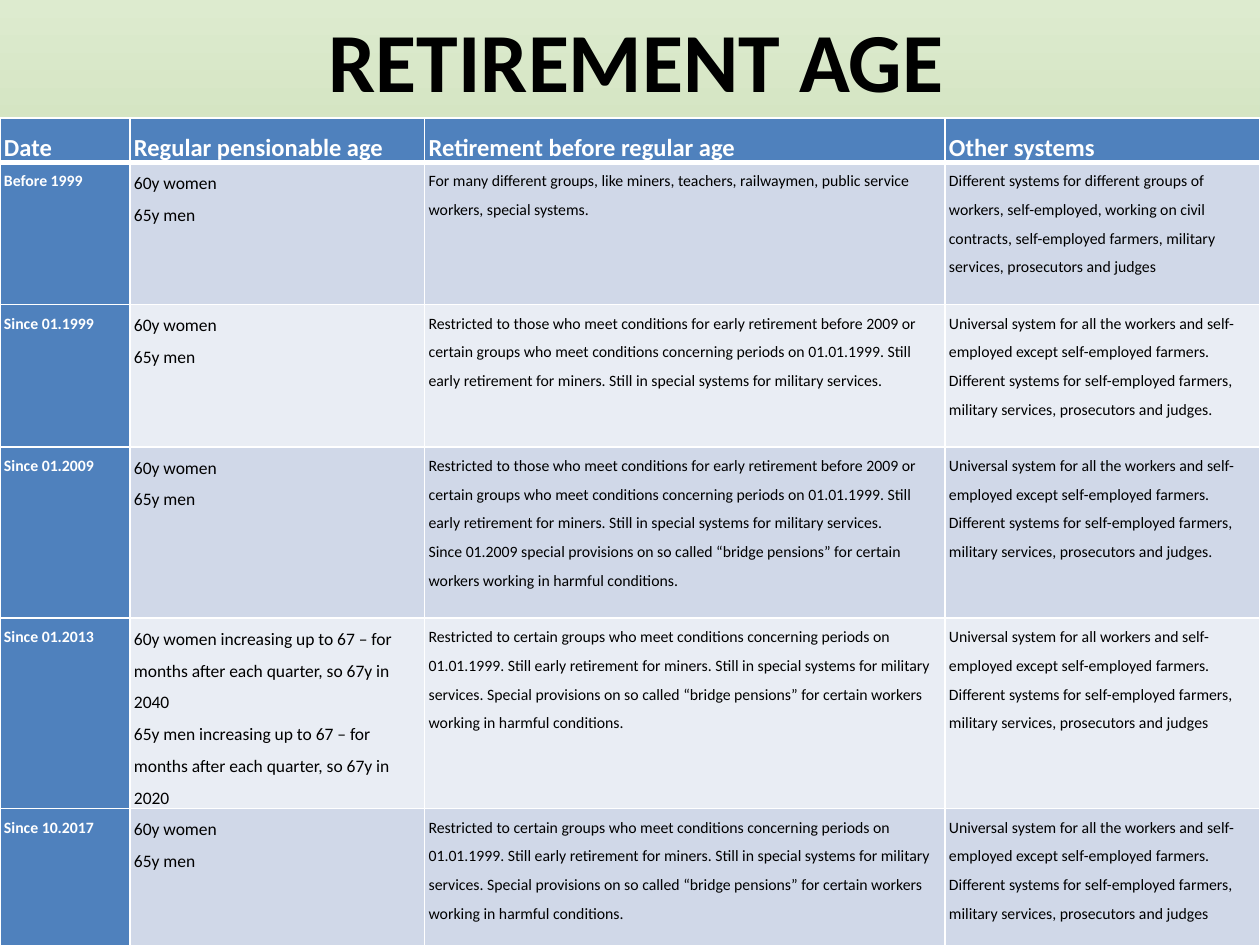
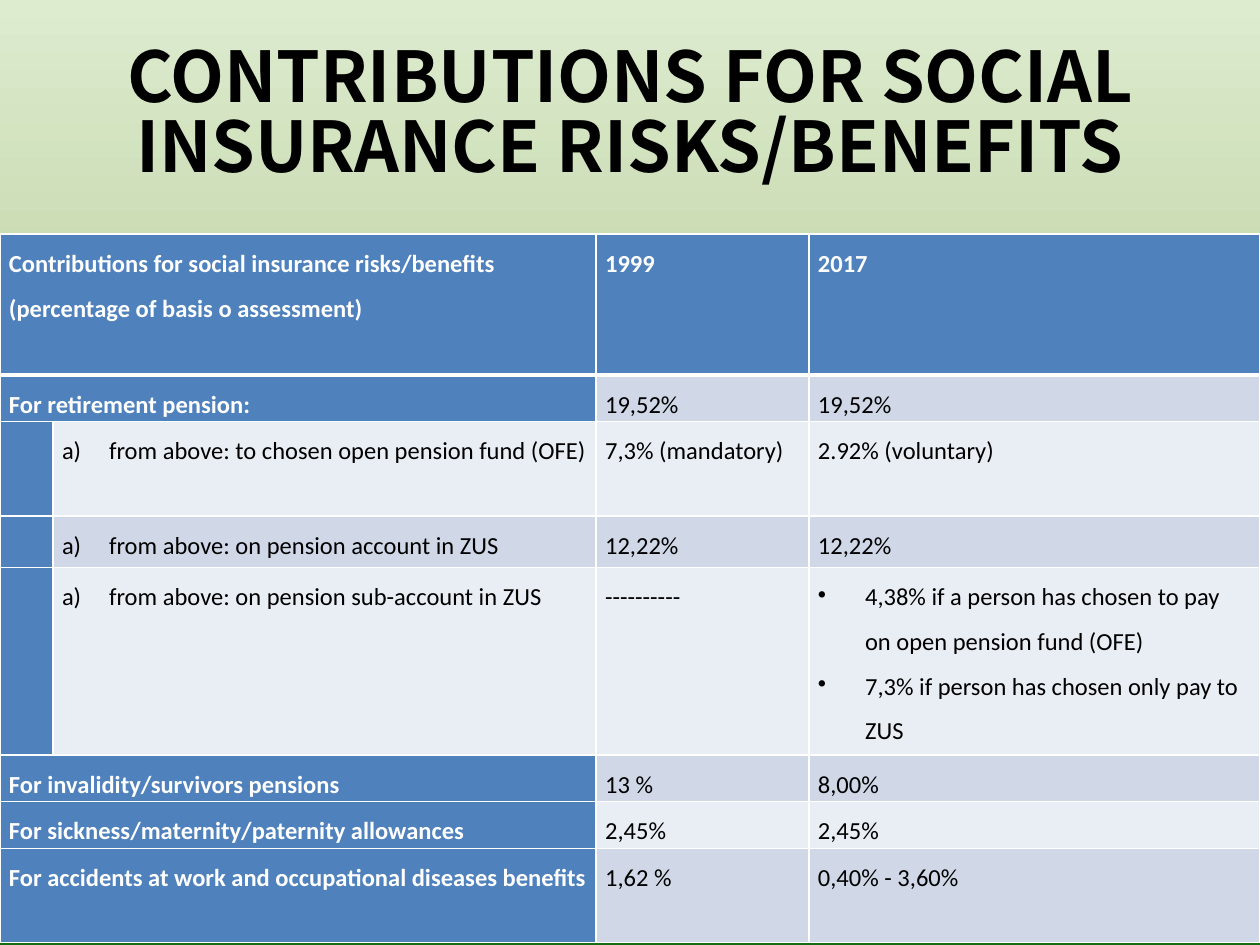
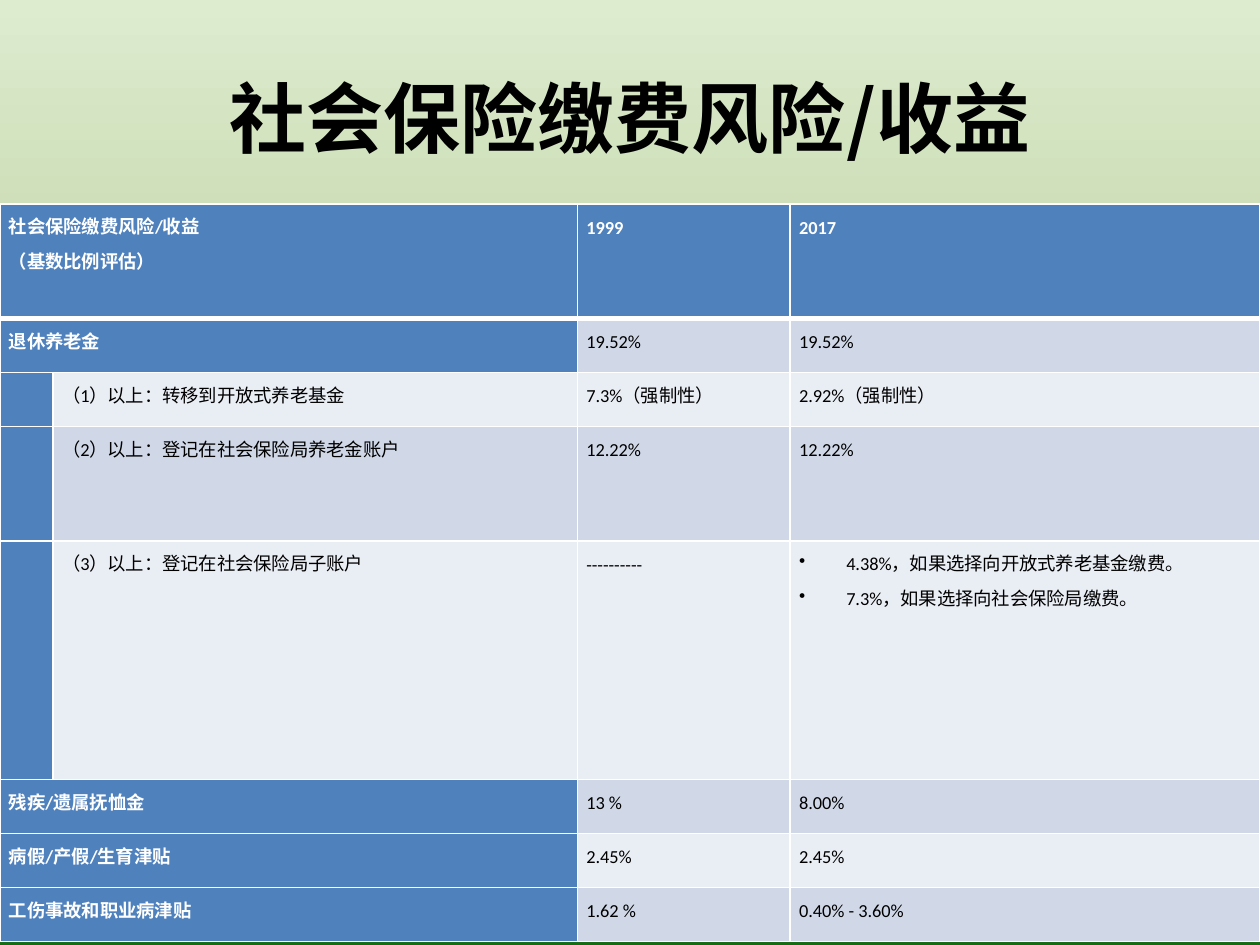
from collections import namedtuple

from lxml import etree
from pptx import Presentation
from pptx.dml.color import RGBColor
from pptx.enum import text as t
from pptx.oxml import parse_xml
from pptx.oxml.ns import qn
from pptx.util import Cm, Pt

BLACK = RGBColor(0x00, 0x00, 0x00)
WHITE = RGBColor(0xFF, 0xFF, 0xFF)
HEADER_BLUE = RGBColor(0x4F, 0x81, 0xBD)
BANDS = RGBColor(0xD0, 0xD8, 0xE8), RGBColor(0xE9, 0xED, 0xF4)
BACKDROP = ((0, "DDEBCF", 100), (91, "9CB86E", 73), (100, "156B13", 100))

LATIN, CJK = "Calibri", "Noto Sans CJK SC"
BULLET = ("a:buChar", {"char": "•"})
LETTER = ("a:buAutoNum", {"type": "alphaLcParenR"})
HANGING = Cm(0.95)

Marked = namedtuple("Marked", "marker lines")

AGES = "60y women\n65y men"
EARLY = ("Restricted to those who meet conditions for early retirement before 2009 or certain "
         "groups who meet conditions concerning periods on 01.01.1999. Still early retirement "
         "for miners. Still in special systems for military services.")
BRIDGE = ("Restricted to certain groups who meet conditions concerning periods on 01.01.1999. "
          "Still early retirement for miners. Still in special systems for military services. "
          "Special provisions on so called “bridge pensions” for certain workers working in "
          "harmful conditions.")
UNIVERSAL = ("Universal system for all the workers and self-employed except self-employed "
             "farmers. Different systems for self-employed farmers, military services, "
             "prosecutors and judges")

# In a row, None continues the cell to its left.
SLIDES = [
    {
        "title": "RETIREMENT AGE", "title_at": (1.4, -0.41),
        "title_font": LATIN, "title_size": 48, "title_spacing": 1.0,
        "top": 2.38, "inset": 0.08, "align": t.PP_ALIGN.LEFT, "spacing": 1.5,
        "header_size": 14, "sizes": (9, 10, 9, 9),
        "columns": (2.62, 5.94, 10.49, 6.35),
        "heights": (0.81, 2.87, 2.87, 3.45, 3.84, 2.87),
        "rows": [
            ("Date", "Regular pensionable age", "Retirement before regular age",
             "Other systems"),
            ("Before 1999", AGES,
             "For many different groups, like miners, teachers, railwaymen, public service "
             "workers, special systems.",
             "Different systems for different groups of workers, self-employed, working on "
             "civil contracts, self-employed farmers, military services, prosecutors and "
             "judges"),
            ("Since 01.1999", AGES, EARLY, UNIVERSAL + "."),
            ("Since 01.2009", AGES,
             EARLY + "\nSince 01.2009 special provisions on so called “bridge pensions” for "
             "certain workers working in harmful conditions.",
             UNIVERSAL + "."),
            ("Since 01.2013",
             "60y women increasing up to 67 – for months after each quarter, so 67y in 2040\n"
             "65y men increasing up to 67 – for months after each quarter, so 67y in 2020",
             BRIDGE, UNIVERSAL.replace("all the workers", "all workers")),
            ("Since 10.2017", AGES, BRIDGE, UNIVERSAL),
        ],
    },
    {
        "title": "CONTRIBUTIONS FOR SOCIAL INSURANCE RISKS/BENEFITS",
        "title_at": (1.27, 0.76),
        "title_font": CJK, "title_size": 40, "title_spacing": 0.84,
        "top": 4.72, "inset": 0.18, "align": t.PP_ALIGN.LEFT, "spacing": 1.5,
        "header_size": 14, "sizes": (14, 14, 14, 14),
        "columns": (1.07, 10.95, 4.29, 9.09),
        "heights": (2.84, 0.94, 1.9, 1.04, 3.78, 0.94, 0.94, 1.9),
        "rows": [
            ("Contributions for social insurance risks/benefits (percentage of basis o "
             "assessment)", None, "1999", "2017"),
            ("For retirement pension:", None, "19,52%", "19,52%"),
            ("", Marked(LETTER, "from above: to chosen open pension fund (OFE)"),
             "7,3% (mandatory)", "2.92% (voluntary)"),
            ("", Marked(LETTER, "from above: on pension account in ZUS"),
             "12,22%", "12,22%"),
            ("", Marked(LETTER, "from above: on pension sub-account in ZUS"), "----------",
             Marked(BULLET, "4,38% if a person has chosen to pay on open pension fund (OFE)\n"
                            "7,3% if person has chosen only pay to ZUS")),
            ("For invalidity/survivors pensions", None, "13 %", "8,00%"),
            ("For sickness/maternity/paternity allowances", None, "2,45%", "2,45%"),
            ("For accidents at work and occupational diseases benefits", None,
             "1,62 %", "0,40% - 3,60%"),
        ],
    },
    {
        "title": "社会保险缴费风险/收益", "title_at": (1.27, 0.76),
        "title_font": CJK, "title_size": 44, "title_spacing": 1.0,
        "top": 4.11, "inset": 0.18, "align": t.PP_ALIGN.JUSTIFY, "spacing": Pt(20),
        "header_size": 10.5, "sizes": (10.5, 10.5, 10.5, 10.5),
        "columns": (1.07, 10.57, 4.29, 9.47),
        "heights": (2.31, 1.09, 1.09, 2.31, 4.8, 1.09, 1.09, 1.09),
        "rows": [
            ("社会保险缴费风险/收益\n（基数比例评估）", None, "1999", "2017"),
            ("退休养老金", None, "19.52%", "19.52%"),
            ("", "（1）以上：转移到开放式养老基金", "7.3%（强制性）", "2.92%（强制性）"),
            ("", "（2）以上：登记在社会保险局养老金账户", "12.22%", "12.22%"),
            ("", "（3）以上：登记在社会保险局子账户", "----------",
             Marked(BULLET, "4.38%，如果选择向开放式养老基金缴费。\n"
                            "7.3%，如果选择向社会保险局缴费。")),
            ("残疾/遗属抚恤金", None, "13 %", "8.00%"),
            ("病假/产假/生育津贴", None, "2.45%", "2.45%"),
            ("工伤事故和职业病津贴", None, "1.62 %", "0.40% - 3.60%"),
        ],
    },
]


def set_all(target, values):
    for name, value in values.items():
        setattr(target, name, value)


def paint_backdrop(slide):
    stops = "".join(
        f'<a:gs pos="{place * 1000}"><a:srgbClr val="{color}">'
        f'<a:alpha val="{opacity * 1000}"/></a:srgbClr></a:gs>'
        for place, color, opacity in BACKDROP)
    slide.background.fill.solid()
    properties = slide.element.cSld.find(qn("p:bg")).find(qn("p:bgPr"))
    properties.replace(properties.find(qn("a:solidFill")), parse_xml(
        '<a:gradFill xmlns:a="http://schemas.openxmlformats.org/drawingml/2006/main" '
        f'rotWithShape="1"><a:gsLst>{stops}</a:gsLst>'
        '<a:lin ang="5400000" scaled="0"/></a:gradFill>'))


def write(frame, lines, font, east_asian, paragraph_format):
    """Fill a text frame, one paragraph for each line."""
    frame.text = lines
    for paragraph in frame.paragraphs:
        set_all(paragraph, paragraph_format)
        for run in paragraph.runs:
            color = font["color"]
            set_all(run.font, {k: v for k, v in font.items() if k != "color"})
            run.font.color.rgb = color
            latin = run.font._element.find(qn("a:latin"))
            latin.addnext(latin.makeelement(qn("a:ea"), {"typeface": east_asian}))


def add_title(slide, content):
    left, top = content["title_at"]
    frame = slide.shapes.add_textbox(Cm(left), Cm(top), Cm(22.86), Cm(3.18)).text_frame
    set_all(frame, {"word_wrap": True, "vertical_anchor": t.MSO_ANCHOR.MIDDLE})
    write(frame, content["title"],
          {"name": content["title_font"], "size": Pt(content["title_size"]),
           "bold": True, "color": BLACK}, CJK,
          {"alignment": t.PP_ALIGN.CENTER, "line_spacing": content["title_spacing"]})


def mark(paragraph, marker):
    tag, attributes = marker
    properties = paragraph._p.get_or_add_pPr()
    properties.set("marL", str(HANGING))
    properties.set("indent", str(-HANGING))
    etree.SubElement(properties, qn(tag), attributes)


def draw_borders(cell, widths):
    properties = cell._tc.get_or_add_tcPr()
    for place, (side, width) in enumerate(widths.items()):
        line = properties.makeelement(qn(f"a:ln{side}"), {"w": str(Pt(width))})
        fill = etree.SubElement(line, qn("a:solidFill"))
        etree.SubElement(fill, qn("a:srgbClr"), {"val": str(WHITE)})
        properties.insert(place, line)


def fill_cell(cell, entry, row, column, content):
    is_header = row == 0
    is_label = is_header or column == 0
    set_all(cell, {"margin_left": Cm(content["inset"]), "margin_right": Cm(content["inset"]),
                   "margin_top": 0, "margin_bottom": 0})
    cell.fill.solid()
    cell.fill.fore_color.rgb = HEADER_BLUE if is_label else BANDS[(row - 1) % 2]
    draw_borders(cell, {"L": 1, "R": 1, "T": 3 if row == 1 else 1, "B": 3 if is_header else 1})
    if not entry:
        return
    marker, lines = entry if isinstance(entry, Marked) else (None, entry)
    size = content["header_size"] if is_header else content["sizes"][column]
    write(cell.text_frame, lines,
          {"name": LATIN, "size": Pt(size), "bold": is_label,
           "color": WHITE if is_label else BLACK}, CJK,
          {"alignment": content["align"], "line_spacing": content["spacing"]})
    if marker:
        for paragraph in cell.text_frame.paragraphs:
            mark(paragraph, marker)


def add_grid(slide, content):
    rows, columns, heights = content["rows"], content["columns"], content["heights"]
    grid = slide.shapes.add_table(len(rows), len(columns), 0, Cm(content["top"]),
                                  Cm(sum(columns)), Cm(sum(heights))).table
    grid.horz_banding = False
    for column, width in zip(grid.columns, columns):
        column.width = Cm(width)
    for row, height in zip(grid.rows, heights):
        row.height = Cm(height)
    for r, entries in enumerate(rows):
        for c, entry in enumerate(entries):
            fill_cell(grid.cell(r, c), entry, r, c, content)
            if entry is None:
                grid.cell(r, c - 1).merge(grid.cell(r, c))


def main():
    deck = Presentation()
    set_all(deck, {"slide_width": Cm(25.4), "slide_height": Cm(19.05)})
    for content in SLIDES:
        slide = deck.slides.add_slide(deck.slide_layouts[6])
        paint_backdrop(slide)
        add_title(slide, content)
        add_grid(slide, content)
    deck.save("out.pptx")


if __name__ == "__main__":
    main()
